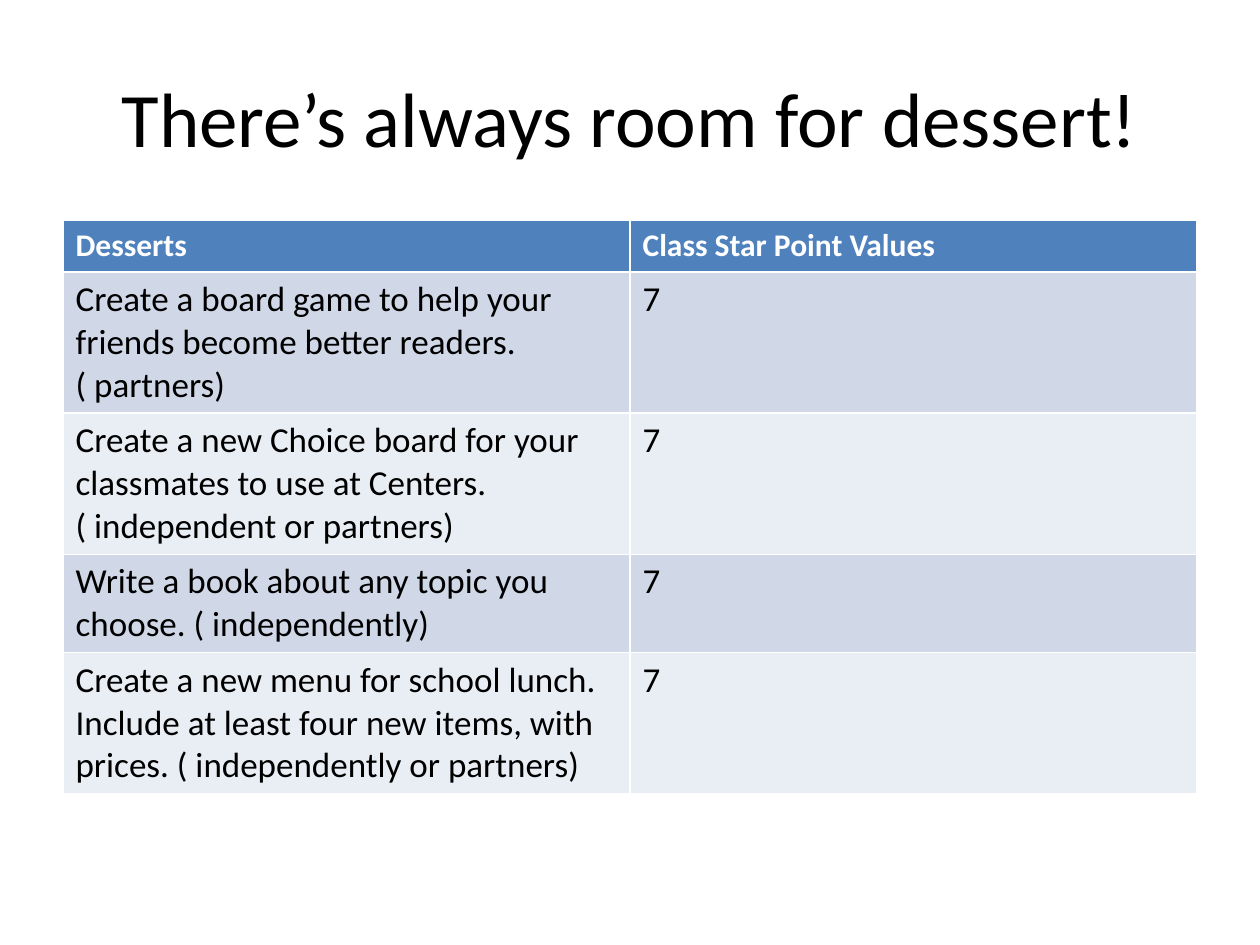
from dataclasses import dataclass

from pptx import Presentation
from pptx.dml.color import RGBColor as RGB
from pptx.enum.text import MSO_ANCHOR as ANCHOR, PP_ALIGN as ALIGN
from pptx.util import Inches, Pt

TITLE = "There’s always room for dessert!"
HEADER = ("Desserts", "Class Star Point Values")
# dessert, points, row height in inches
DESSERTS = [
    ("Create a board game to help your friends become better readers.( partners)", 7, 1.12),
    ("Create a new Choice board for your classmates to use at Centers. "
     "( independent or partners)", 7, 1.12),
    ("Write a book about any topic you choose. ( independently)", 7, 0.78),
    ("Create a new menu for school lunch. Include at least four new items, "
     "with prices. ( independently or partners)", 7, 1.12),
]
HEADER_HEIGHT = 0.41
LEFT, WIDTH = 0.5, 9


@dataclass(frozen=True)
class Theme:
    font: str = "Calibri"
    ink: str = "000000"
    header_ink: str = "FFFFFF"
    header_fill: str = "4F81BD"
    bands: tuple = ("D0D8E8", "E9EDF4")
    title_size: int = 44
    header_size: int = 18
    body_size: int = 20


THEME = Theme()


def write(tf, text, size, color, bold=False):
    tf.text = text
    font = tf.paragraphs[0].runs[0].font
    font.name, font.size, font.bold = THEME.font, Pt(size), bold
    font.color.rgb = RGB.from_string(color)


def add_title(slide):
    tf = slide.shapes.add_textbox(
        Inches(LEFT), Inches(0.3), Inches(WIDTH), Inches(1.25)).text_frame
    tf.word_wrap = True
    tf.vertical_anchor = ANCHOR.MIDDLE
    write(tf, TITLE, THEME.title_size, THEME.ink)
    tf.paragraphs[0].alignment = ALIGN.CENTER


def fill_row(table, index, texts, height, fill, size, color, bold=False):
    table.rows[index].height = Inches(height)
    for cell, text in zip(table.rows[index].cells, texts):
        cell.fill.solid()
        cell.fill.fore_color.rgb = RGB.from_string(fill)
        write(cell.text_frame, str(text), size, color, bold)


def add_menu(slide):
    height = HEADER_HEIGHT + sum(row[2] for row in DESSERTS)
    table = slide.shapes.add_table(
        len(DESSERTS) + 1, len(HEADER),
        Inches(LEFT), Inches(1.75), Inches(WIDTH), Inches(height)).table
    fill_row(table, 0, HEADER, HEADER_HEIGHT, THEME.header_fill,
             THEME.header_size, THEME.header_ink, bold=True)
    for i, (dessert, points, row_height) in enumerate(DESSERTS):
        fill_row(table, i + 1, (dessert, points), row_height,
                 THEME.bands[i % 2], THEME.body_size, THEME.ink)


def main():
    prs = Presentation()
    prs.slide_width, prs.slide_height = Inches(10), Inches(7.5)
    slide = prs.slides.add_slide(prs.slide_layouts[6])
    add_title(slide)
    add_menu(slide)
    prs.save("out.pptx")


if __name__ == "__main__":
    main()
